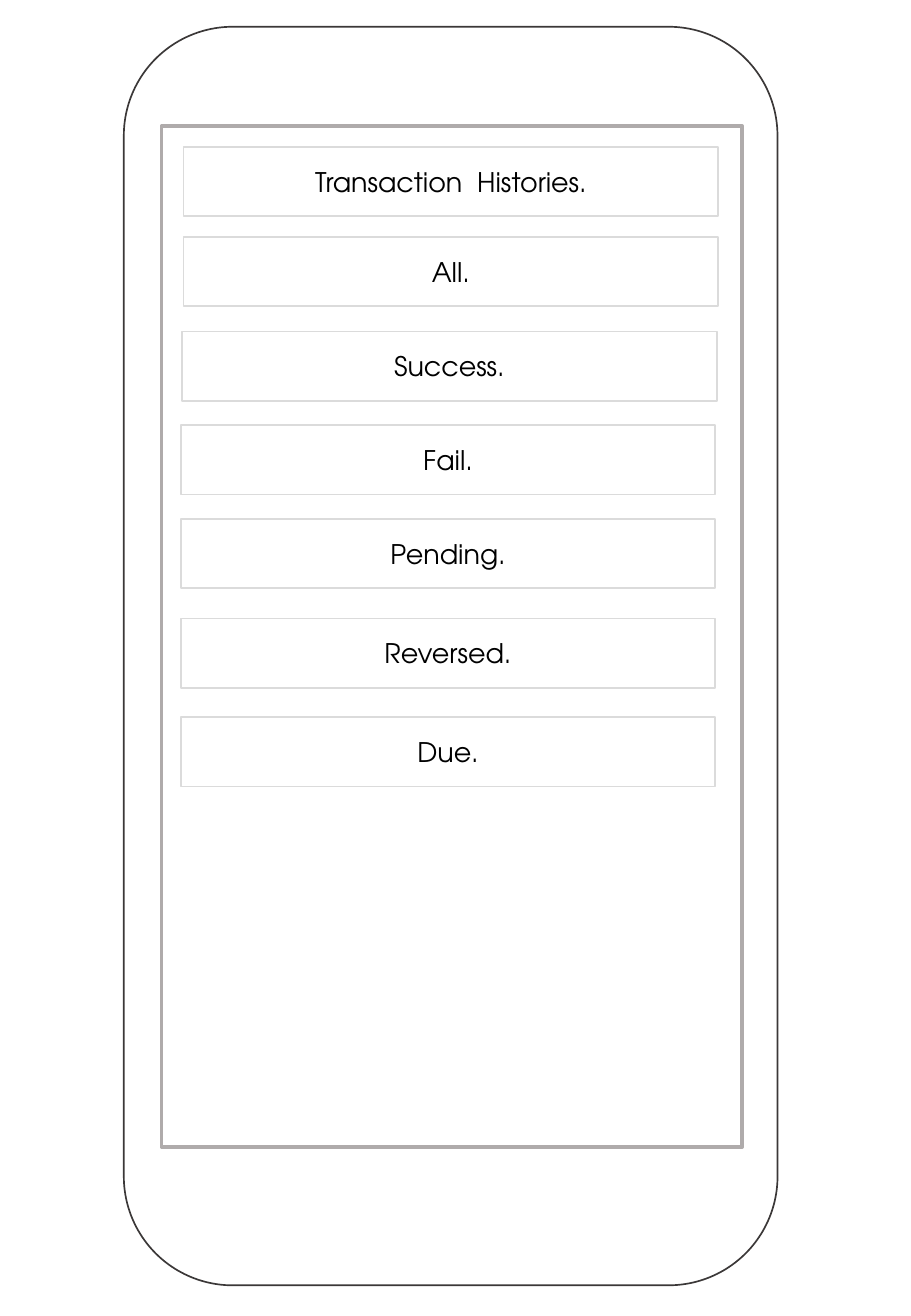
from pptx import Presentation
from pptx.dml.color import RGBColor
from pptx.enum.shapes import MSO_SHAPE as Shape
from pptx.enum.text import MSO_ANCHOR as Anchor, PP_ALIGN as Align
from pptx.util import Cm, Pt

COLORS = {
    "paper": "FFFFFF",
    "phone_edge": "3B3838",
    "screen_edge": "AFABAB",
    "button_edge": "DBDBDB",
    "text": "000000",
}
FONT = "TeX Gyre Adventor"

# Phone outline on the page, and screen within the phone: left, top, width, height
PHONE = (2.59, 0.56, 13.67, 26.31)
SCREEN = (0.79, 2.08, 12.14, 21.34)

# Buttons: label, left and top within the screen
BUTTON_SIZE = (11.18, 1.45)
BUTTONS = [
    ("Transaction  Histories.", 0.46, 0.43),
    ("All.", 0.46, 2.31),
    ("Success.", 0.43, 4.29),
    ("Fail.", 0.4, 6.25),
    ("Pending.", 0.4, 8.21),
    ("Reversed.", 0.4, 10.29),
    ("Due.", 0.4, 12.35),
]


def color(name):
    return RGBColor.from_string(COLORS[name])


def add_panel(page, box, edge, weight, kind=Shape.RECTANGLE):
    panel = page.shapes.add_shape(kind, *(Cm(length) for length in box))
    panel.shadow.inherit = False
    panel.fill.solid()
    panel.fill.fore_color.rgb = color("paper")
    panel.line.color.rgb = color(edge)
    panel.line.width = Pt(weight)
    return panel


def add_button(page, box, label):
    frame = add_panel(page, box, "button_edge", 1).text_frame
    frame.word_wrap = True
    frame.vertical_anchor = Anchor.MIDDLE
    frame.text = label
    para = frame.paragraphs[0]
    para.alignment = Align.CENTER
    font = para.runs[0].font
    font.name = FONT
    font.size = Pt(16)
    font.color.rgb = color("text")


def add_screen(page, box):
    add_panel(page, box, "screen_edge", 2.25)
    for label, left, top in BUTTONS:
        add_button(page, (box[0] + left, box[1] + top, *BUTTON_SIZE), label)


def add_phone(page, box):
    add_panel(page, box, "phone_edge", 1, Shape.ROUNDED_RECTANGLE)
    left, top, width, height = SCREEN
    add_screen(page, (box[0] + left, box[1] + top, width, height))


def main():
    deck = Presentation()
    deck.slide_width = Cm(19.05)
    deck.slide_height = Cm(27.51)
    page = deck.slides.add_slide(deck.slide_layouts[6])
    add_phone(page, PHONE)
    deck.save("out.pptx")


if __name__ == "__main__":
    main()
